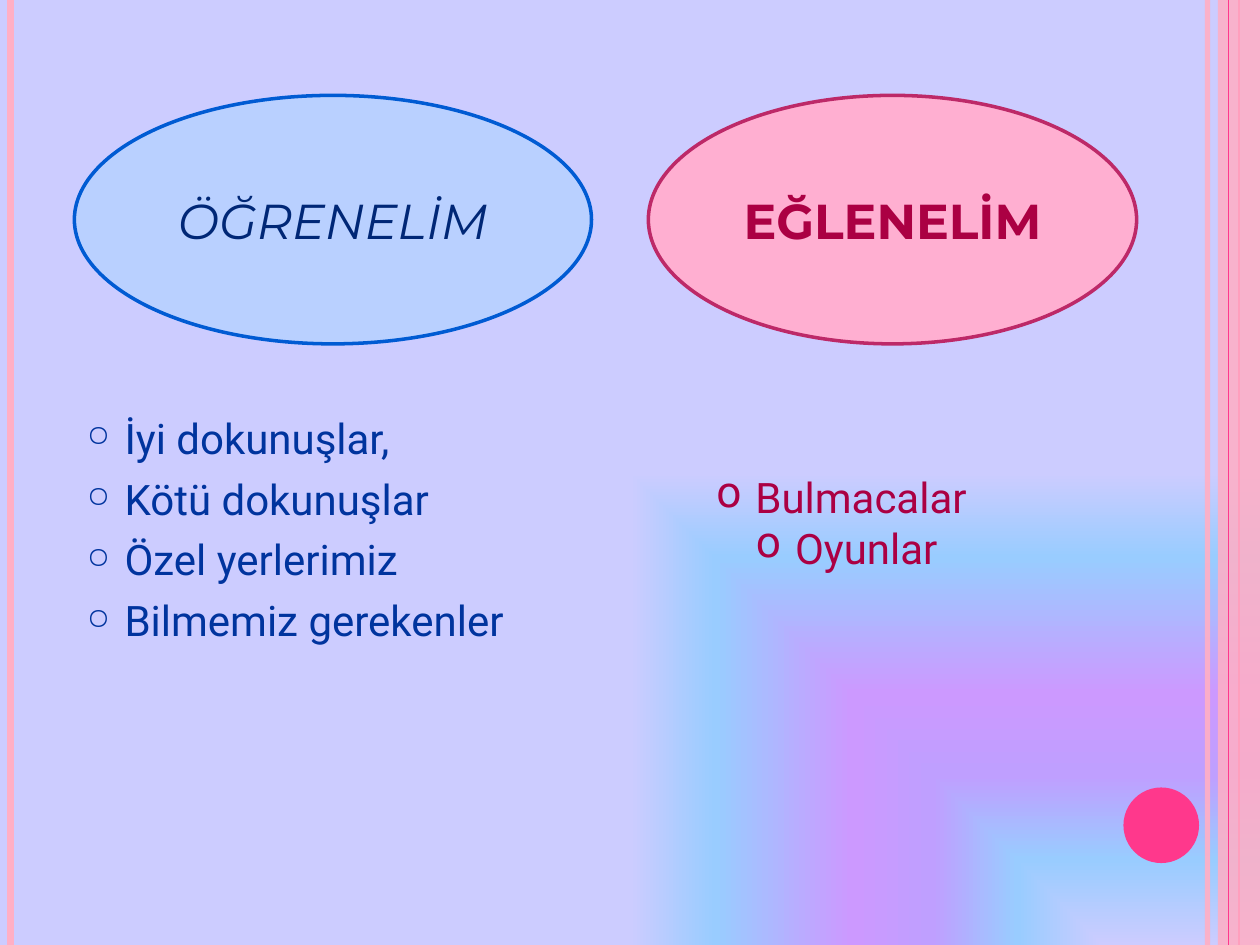
from lxml.etree import SubElement
from pptx import Presentation
from pptx.dml.color import RGBColor
from pptx.enum.shapes import MSO_CONNECTOR, MSO_SHAPE
from pptx.enum.text import MSO_ANCHOR, PP_ALIGN
from pptx.oxml.ns import qn
from pptx.util import Pt

COLORS = {
    "lavender": "CCCCFF", "sky": "99CCFF", "violet": "BF9FFF", "orchid": "CC99FF",
    "rose": "FFAFC5", "pink": "FF388C", "blue_fill": "B9D0FF", "blue_line": "005BD3",
    "navy": "002776", "blue_text": "00349E", "pink_fill": "FFAFD1",
    "pink_line": "BD2968", "crimson": "AB0043",
}
BACKDROP = [(0, "lavender", 100), (18, "sky", 100), (36, "violet", 78),
            (53, "orchid", 100), (82, "sky", 100), (100, "lavender", 100)]
STRIPES = [(690, "rose", 3, 93), (6, "rose", 4.5, 100), (708, "pink", 1.5, 100)]
LEARN_TOPICS = ["İyi dokunuşlar,", "Kötü dokunuşlar", "Özel yerlerimiz", "Bilmemiz gerekenler"]
FUN_TOPICS = ["Bulmacalar ", "Oyunlar"]


def assign(target, values):
    """Set every attribute named in values on target."""
    for name, value in values.items():
        setattr(target, name, value)


class SlidePainter:
    """Hold the colours and the current slide and draw its elements."""

    def __init__(self, slide, colors):
        self.slide = slide
        self.colors = colors

    def rgb(self, color):
        """Return the named colour."""
        return RGBColor.from_string(self.colors[color])

    def fade(self, color_parent, opacity):
        """Give the colour inside color_parent an opacity in percent."""
        if opacity < 100:
            srgb = color_parent.find(".//" + qn("a:srgbClr"))
            SubElement(srgb, qn("a:alpha"), val=str(opacity * 1000))

    def background(self, stops):
        """Fill the background with a gradient growing from the lower right corner."""
        self.slide.background.fill.gradient()
        gradient = self.slide.element.find(".//" + qn("a:gradFill"))
        for child in list(gradient):
            gradient.remove(child)
        stop_list = SubElement(gradient, qn("a:gsLst"))
        for position, color, opacity in stops:
            stop = SubElement(stop_list, qn("a:gs"), pos=str(position * 1000))
            SubElement(stop, qn("a:srgbClr"), val=self.colors[color])
            self.fade(stop, opacity)
        focus = SubElement(gradient, qn("a:path"), attrib={"path": "rect"})
        SubElement(focus, qn("a:fillToRect"), l="100000", t="100000")

    def stripe(self, x, color, width, opacity=100):
        """Draw a vertical line over the full slide height."""
        line = self.slide.shapes.add_connector(
            MSO_CONNECTOR.STRAIGHT, Pt(x), Pt(0), Pt(x), Pt(540))
        line.line.width = Pt(width)
        line.line.color.rgb = self.rgb(color)
        properties = line.element.spPr
        self.fade(properties, opacity)
        SubElement(properties, qn("a:effectLst"))

    def shape(self, kind, box, fill, outline=None, opacity=100):
        """Draw a filled preset shape with an optional outline."""
        shape = self.slide.shapes.add_shape(kind, *map(Pt, box))
        shape.shadow.inherit = False
        shape.fill.solid()
        shape.fill.fore_color.rgb = self.rgb(fill)
        self.fade(shape.element.spPr, opacity)
        if outline:
            shape.line.width = Pt(2)
            shape.line.color.rgb = self.rgb(outline)
        else:
            shape.line.fill.background()
        return shape

    def add_words(self, paragraph, text, color, font):
        """Add one coloured run in the given font format."""
        run = paragraph.add_run()
        run.text = text
        assign(run.font, font)
        run.font.color.rgb = self.rgb(color)

    def heading(self, box, text, fill, outline, color, emphasis):
        """Draw an ellipse with a centred title."""
        frame = self.shape(MSO_SHAPE.OVAL, box, fill, outline).text_frame
        assign(frame, {"word_wrap": True, "vertical_anchor": MSO_ANCHOR.MIDDLE})
        frame.paragraphs[0].alignment = PP_ALIGN.CENTER
        self.add_words(frame.paragraphs[0], text, color,
                       {"name": "Montserrat", "size": Pt(28), **emphasis})

    def bullets(self, box, topics, color, mark, indent, mark_size, frame_format, spacing):
        """Add a bulleted list."""
        frame = self.slide.shapes.add_textbox(*map(Pt, box)).text_frame
        assign(frame, {"word_wrap": True, **frame_format})
        for index, topic in enumerate(topics):
            paragraph = frame.add_paragraph() if index else frame.paragraphs[0]
            assign(paragraph, spacing)
            properties = paragraph._p.get_or_add_pPr()
            properties.set("marL", str(Pt(indent)))
            properties.set("indent", str(-Pt(indent)))
            mark_color = SubElement(properties, qn("a:buClr"))
            SubElement(mark_color, qn("a:srgbClr"), val=self.colors[color])
            SubElement(properties, qn("a:buSzPct"), val=str(mark_size * 1000))
            SubElement(properties, qn("a:buChar"), char=mark)
            self.add_words(paragraph, topic, color, {"name": "Roboto", "size": Pt(24)})


def main():
    """Build and save the slide."""
    deck = Presentation()
    assign(deck, {"slide_width": Pt(720), "slide_height": Pt(540)})
    painter = SlidePainter(deck.slides.add_slide(deck.slide_layouts[6]), COLORS)

    painter.background(BACKDROP)
    for stripe in STRIPES:
        painter.stripe(*stripe)
    painter.shape(MSO_SHAPE.RECTANGLE, (696, 0, 24, 540), "rose", opacity=87)
    painter.stripe(702, "pink", 0.75)
    painter.shape(MSO_SHAPE.OVAL, (642, 450, 43.2, 43.2), "pink")

    painter.bullets((42.5, 126, 306, 384), LEARN_TOPICS, "blue_text", "○", 21.6, 70,
                    {"margin_top": Pt(109.5)}, {"space_after": Pt(6)})
    painter.heading((42.5, 54.5, 295.5, 142), "ÖĞRENELİM",
                    "blue_fill", "blue_line", "navy", {"italic": True})
    painter.heading((370.5, 54.5, 279, 142), "EĞLENELİM",
                    "pink_fill", "pink_line", "crimson", {"bold": True})
    painter.bullets((370.5, 230.5, 232.5, 136), FUN_TOPICS, "crimson", "o", 22.5, 100,
                    {"vertical_anchor": MSO_ANCHOR.MIDDLE, "margin_right": Pt(13)},
                    {"alignment": PP_ALIGN.CENTER})
    deck.save("out.pptx")


if __name__ == "__main__":
    main()
